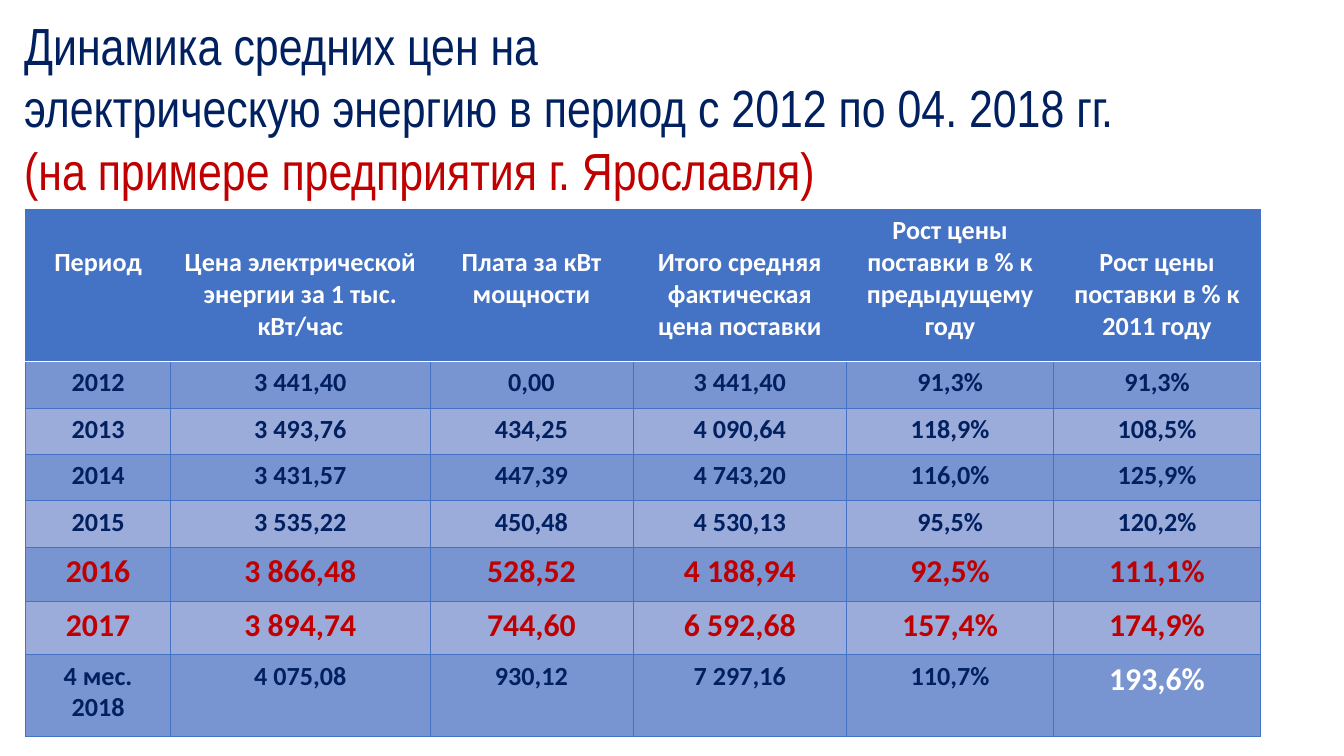
"""Slide with a table of average electricity prices by year."""
import dataclasses

import pptx
import pptx.dml.color
import pptx.enum.text
import pptx.oxml
import pptx.oxml.ns
import pptx.util


@dataclasses.dataclass(frozen=True)
class Theme:
    """Fonts, type sizes and colours of the slide."""

    title_font: str = "Arial Narrow"
    table_font: str = "Calibri"
    title_size: int = 28
    body_size: int = 14
    strong_size: int = 17
    navy: str = "002060"
    red: str = "C00000"
    white: str = "FFFFFF"
    blue: str = "4472C4"
    dark_band: str = "7894D1"
    light_band: str = "9BABDA"


THEME = Theme()
PAGE_COLUMNS = 1000
PAGE_ROWS = PAGE_COLUMNS * 9 / 16
COLUMNS = (108, 193, 151, 159, 154, 154)
ROWS = (113, 34.6, 34.6, 34.6, 34.6, 40, 40, 61)
TITLE = (
    ("Динамика средних цен на", THEME.navy),
    ("электрическую энергию в период с 2012 по 04. 2018 гг.", THEME.navy),
    ("(на примере предприятия г. Ярославля)", THEME.red),
)
HEADER = (
    "Период",
    "Цена электрической энергии за 1 тыс. кВт/час",
    "Плата за кВт мощности",
    "Итого средняя фактическая цена поставки",
    "Рост цены поставки в % к предыдущему году",
    "Рост цены поставки в % к 2011 году",
)
PRICES = (
    ("2012", "3 441,40", "0,00", "3 441,40", "91,3%", "91,3%"),
    ("2013", "3 493,76", "434,25", "4 090,64", "118,9%", "108,5%"),
    ("2014", "3 431,57", "447,39", "4 743,20", "116,0%", "125,9%"),
    ("2015", "3 535,22", "450,48", "4 530,13", "95,5%", "120,2%"),
    ("2016", "3 866,48", "528,52", "4 188,94", "92,5%", "111,1%"),
    ("2017", "3 894,74", "744,60", "6 592,68", "157,4%", "174,9%"),
    ("4 мес. 2018", "4 075,08", "930,12", "7 297,16", "110,7%", "193,6%"),
)
RED_YEARS = ("2016", "2017")
TALLEST_HEADING = 4


def units(count):
    """Return the length of a number of page grid units."""
    return pptx.util.Inches(count / 100)


def rgb(value):
    """Return a colour object for a hexadecimal value."""
    return pptx.dml.color.RGBColor.from_string(value)


def write(para, text, *, font, size, color, bold=False, align="LEFT"):
    """Put formatted text into a paragraph."""
    para.alignment = getattr(pptx.enum.text.PP_ALIGN, align)
    span = para.add_run()
    span.text = text
    span.font.name = font
    span.font.size = pptx.util.Pt(size)
    span.font.bold = bold
    span.font.color.rgb = rgb(color)


def add_title(page):
    """Place the title lines at the top of the page."""
    box = page.shapes.title
    box.left, box.top, box.width, box.height = map(units, (8, 4.6, 1093, 151))
    frame = box.text_frame
    frame.word_wrap = True
    frame.auto_size = pptx.enum.text.MSO_AUTO_SIZE.SHAPE_TO_FIT_TEXT
    frame.vertical_anchor = pptx.enum.text.MSO_ANCHOR.TOP
    for index, (text, color) in enumerate(TITLE):
        para = frame.add_paragraph() if index else frame.paragraphs[0]
        write(para, text, font=THEME.title_font, size=THEME.title_size, color=color)


def set_borders(cell, **sides):
    """Draw cell borders given as side=(colour, points)."""
    properties = cell._tc.get_or_add_tcPr()
    for side, (color, points) in sides.items():
        properties.append(pptx.oxml.parse_xml(
            f'<a:ln{side} {pptx.oxml.ns.nsdecls("a")} w="{pptx.util.Pt(points)}">'
            f'<a:solidFill><a:srgbClr val="{color}"/></a:solidFill></a:ln{side}>'
        ))


def text_style(row, column):
    """Return the type size and colour for a table cell."""
    if row == 0:
        return THEME.body_size, THEME.white
    if PRICES[row - 1][0] in RED_YEARS:
        return THEME.strong_size, THEME.red
    if row == len(PRICES) and column == len(COLUMNS) - 1:
        return THEME.strong_size, THEME.white
    return THEME.body_size, THEME.navy


def fill_cell(cell, text, row, column):
    """Format one table cell and write its text."""
    thin, rule = (THEME.blue, 0.5), (THEME.white, 1)
    set_borders(cell, L=thin, R=thin, T=rule if row == 1 else thin,
                B=rule if row == 0 else thin)
    cell.fill.solid()
    band = THEME.dark_band if row % 2 else THEME.light_band
    cell.fill.fore_color.rgb = rgb(band if row else THEME.blue)
    lowered = row == 0 and column != TALLEST_HEADING
    cell.margin_left = cell.margin_right = units(10)
    cell.margin_top = units(27.5 if lowered else 4)
    cell.margin_bottom = units(4)
    size, color = text_style(row, column)
    write(cell.text_frame.paragraphs[0], text, font=THEME.table_font,
          size=size, color=color, bold=True, align="CENTER")


def add_price_table(page):
    """Add the table of prices under the title."""
    table = page.shapes.add_table(
        len(ROWS), len(COLUMNS), units(19), units(156),
        units(sum(COLUMNS)), units(sum(ROWS)),
    ).table
    for column, width in zip(table.columns, COLUMNS):
        column.width = units(width)
    for row, height in zip(table.rows, ROWS):
        row.height = units(height)
    for row, texts in enumerate((HEADER, *PRICES)):
        for column, text in enumerate(texts):
            fill_cell(table.cell(row, column), text, row, column)


def main():
    """Build the deck and save it."""
    deck = pptx.Presentation()
    deck.slide_width, deck.slide_height = units(PAGE_COLUMNS), units(PAGE_ROWS)
    page = deck.slides.add_slide(deck.slide_layouts.get_by_name("Title Only"))
    add_title(page)
    add_price_table(page)
    deck.save("out.pptx")


if __name__ == "__main__":
    main()
